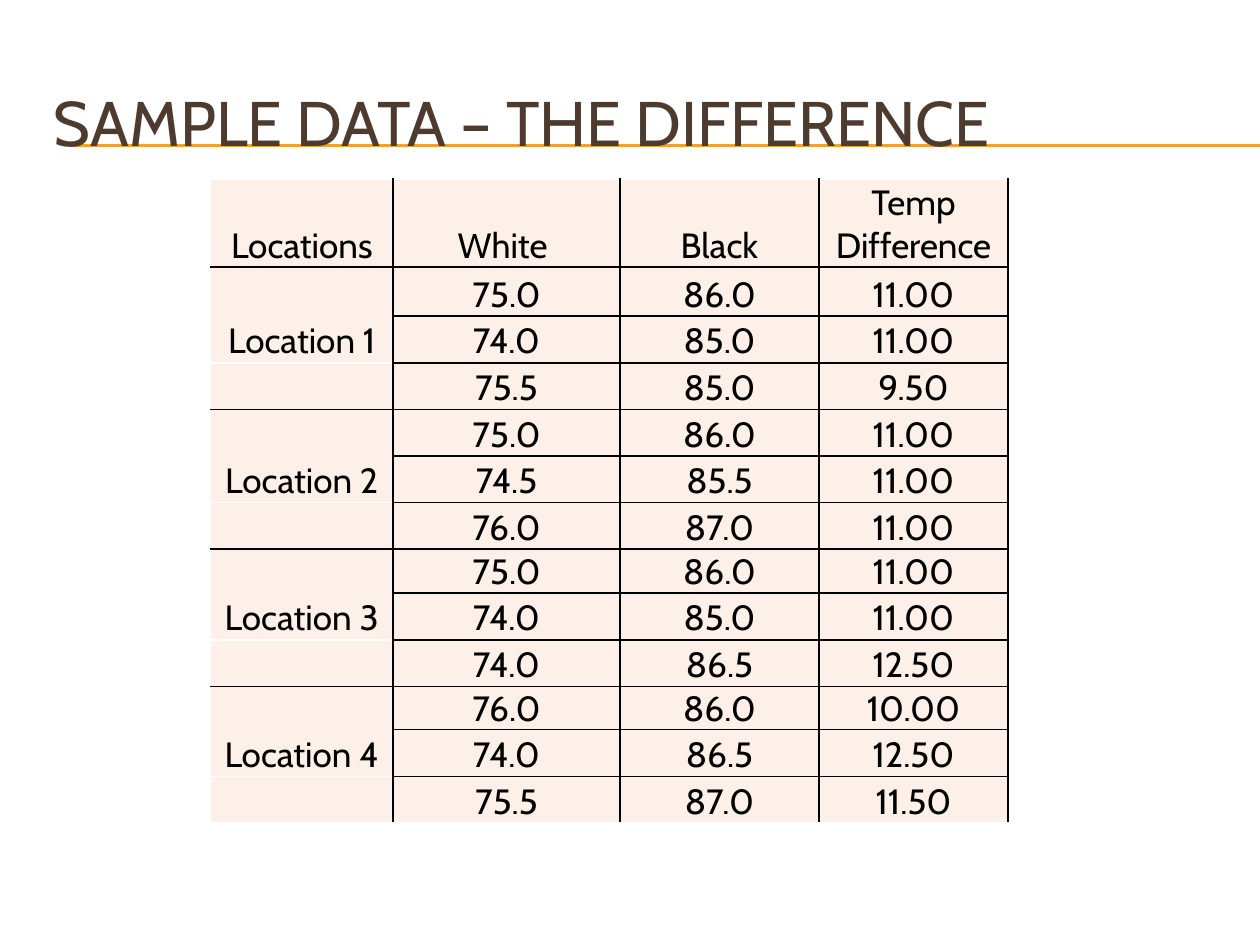
"""Builds a slide with a table of sample temperatures and their differences."""
from lxml import etree
from pptx import Presentation
from pptx.dml.color import RGBColor
from pptx.enum.shapes import MSO_CONNECTOR
from pptx.enum.text import MSO_ANCHOR, PP_ALIGN
from pptx.oxml.ns import qn
from pptx.util import Inches, Pt

STRAIGHT = MSO_CONNECTOR.STRAIGHT
MIDDLE, BOTTOM = MSO_ANCHOR.MIDDLE, MSO_ANCHOR.BOTTOM
CENTER = PP_ALIGN.CENTER

TITLE = "SAMPLE DATA – THE DIFFERENCE"
HEADINGS = ["Locations", "White ", "Black", "Temp Difference"]
READINGS = {
    "Location 1": [("75.0", "86.0", "11.00"), ("74.0", "85.0", "11.00"), ("75.5", "85.0", "9.50")],
    "Location 2": [("75.0", "86.0", "11.00"), ("74.5", "85.5", "11.00"), ("76.0", "87.0", "11.00")],
    "Location 3": [("75.0", "86.0", "11.00"), ("74.0", "85.0", "11.00"), ("74.0", "86.5", "12.50")],
    "Location 4": [("76.0", "86.0", "10.00"), ("74.0", "86.5", "12.50"), ("75.5", "87.0", "11.50")],
}
COLORS = {"title": "4E3B30", "rule": "F0A22E", "cell": "FCF0E8", "ink": "000000", "paper": "FFFFFF"}
FONT = "Cabin"
GROUP = 3
COLUMN_WIDTHS = [1.45, 1.8, 1.58, 1.5]
ROW_HEIGHTS = [0.7, 0.39] + [0.37] * 5 + [0.35, 0.37, 0.37, 0.34, 0.37, 0.37]


def color(name):
    return RGBColor.from_string(COLORS[name])


def style_font(paragraph, size, ink):
    paragraph.font.name = FONT
    paragraph.font.size = Pt(size)
    paragraph.font.color.rgb = color(ink)


def add_rule(slide, top):
    rule = slide.shapes.add_connector(STRAIGHT, Inches(0.56), Inches(top), Inches(10), Inches(top))
    rule.line.color.rgb = color("rule")
    rule.line.width = Pt(0.75)
    etree.SubElement(rule._element.spPr, qn("a:effectLst"))


def add_title(slide):
    title = slide.shapes.add_textbox(Inches(0.33), Inches(0.5), Inches(9.5), Inches(0.92))
    frame = title.text_frame
    frame.word_wrap = True
    frame.vertical_anchor = MIDDLE
    frame.text = TITLE
    style_font(frame.paragraphs[0], 36, "title")


def edge_inks(row, column, last_row):
    in_location = column == 0 and row > 0
    top_open = row == 0 or (in_location and row % GROUP != 1)
    bottom_open = row == last_row or (in_location and row % GROUP != 0)
    opened = {"L": column == 0, "R": False, "T": top_open, "B": bottom_open}
    return {side: "paper" if is_open else "ink" for side, is_open in opened.items()}


def style_cell(cell, inks):
    cell.margin_left = cell.margin_right = cell.margin_top = Inches(0.01)
    cell.margin_bottom = 0
    cell.vertical_anchor = BOTTOM
    properties = cell._tc.get_or_add_tcPr()
    for side, ink in inks.items():
        edge = etree.SubElement(properties, qn(f"a:ln{side}"), w=str(Pt(1)))
        fill = etree.SubElement(edge, qn("a:solidFill"))
        etree.SubElement(fill, qn("a:srgbClr"), val=COLORS[ink])
    cell.fill.solid()
    cell.fill.fore_color.rgb = color("cell")
    paragraph = cell.text_frame.paragraphs[0]
    paragraph.alignment = CENTER
    style_font(paragraph, 20, "ink")


def add_readings(slide):
    rows = [HEADINGS]
    for location, readings in READINGS.items():
        rows += [(location if i == 0 else "", *reading) for i, reading in enumerate(readings)]
    table = slide.shapes.add_table(
        len(rows), len(HEADINGS), Inches(1.67), Inches(1.42),
        Inches(sum(COLUMN_WIDTHS)), Inches(sum(ROW_HEIGHTS))).table
    table.first_row = table.horz_banding = False
    for column, width in zip(table.columns, COLUMN_WIDTHS):
        column.width = Inches(width)
    for row, height in zip(table.rows, ROW_HEIGHTS):
        row.height = Inches(height)
    for r, texts in enumerate(rows):
        for c, text in enumerate(texts):
            cell = table.cell(r, c)
            cell.text = text
            style_cell(cell, edge_inks(r, c, len(rows) - 1))
    for first in range(1, len(rows), GROUP):
        table.cell(first, 0).merge(table.cell(first + 1, 0))


def main():
    deck = Presentation()
    deck.slide_width, deck.slide_height = Inches(10), Inches(7.5)
    slide = deck.slides.add_slide(deck.slide_layouts[6])
    for top in (1.15, 1.16):
        add_rule(slide, top)
    add_title(slide)
    add_readings(slide)
    deck.save("out.pptx")


if __name__ == "__main__":
    main()
